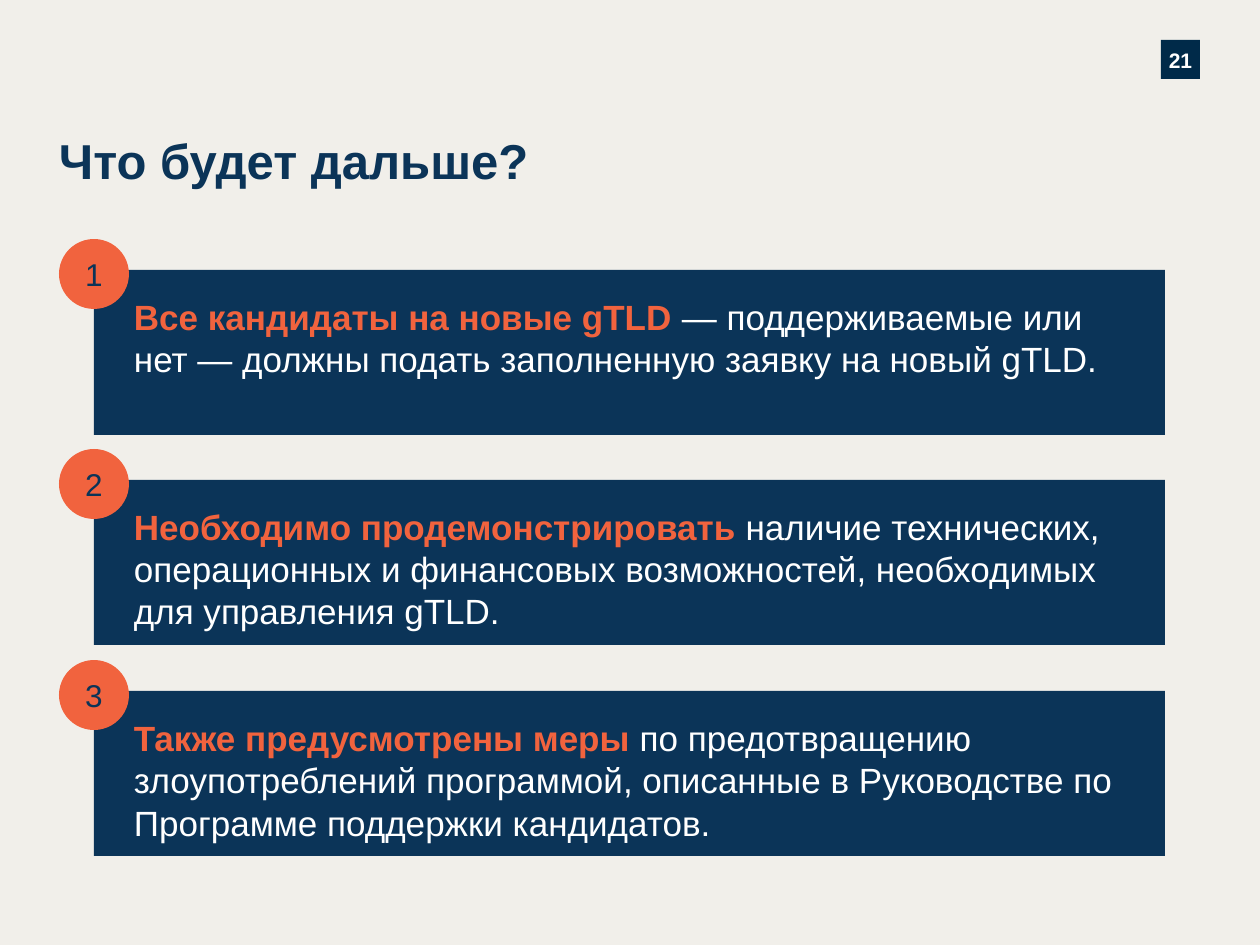
from dataclasses import dataclass

from pptx import Presentation
from pptx.dml.color import RGBColor
from pptx.enum.shapes import MSO_SHAPE
from pptx.enum.text import MSO_ANCHOR, PP_ALIGN
from pptx.util import Emu, Pt


@dataclass(frozen=True)
class Theme:
    font: str = "Arial"
    paper: str = "F1EFEA"
    navy: str = "0B3458"
    dark: str = "002A49"
    orange: str = "F1633E"
    white: str = "FFFFFF"
    title: int = 28
    body: int = 20
    leading: int = 24
    number: int = 18
    page: int = 12


T = Theme()
PX = 914400 / 126


def add_box(kind, box, fill, margins, anchor, align):
    """Add a shape (no fill colour means no fill); return its text frame and paragraph."""
    sp = s.shapes.add_shape(kind, *(Emu(round(v * PX)) for v in box))
    sp.shadow.inherit = False
    sp.line.fill.background()
    sp.fill.solid()
    sp.fill.fore_color.rgb = RGBColor.from_string(fill)
    return set_frame(sp.text_frame, margins, anchor, align)


def set_frame(tf, margins, anchor, align):
    tf.word_wrap = True
    tf.vertical_anchor = anchor
    tf.margin_left, tf.margin_top, tf.margin_right, tf.margin_bottom = (
        Emu(round(v * PX)) for v in margins)
    p = tf.paragraphs[0]
    p.alignment = align

    def add_run(text, size, color, bold=False):
        r = p.add_run()
        r.text = text
        r.font.name, r.font.size, r.font.bold = T.font, Pt(size), bold
        r.font.color.rgb = RGBColor.from_string(color)

    return p, add_run


prs = Presentation()
prs.slide_width, prs.slide_height = Emu(round(1260 * PX)), Emu(round(945 * PX))
s = prs.slides.add_slide(prs.slide_layouts[6])
s.background.fill.solid()
s.background.fill.fore_color.rgb = RGBColor.from_string(T.paper)

# Page number
p, add_run = add_box(MSO_SHAPE.RECTANGLE, (1161, 40, 39, 39), T.dark,
                     (0, 0, 0, 0), MSO_ANCHOR.MIDDLE, PP_ALIGN.CENTER)
p.line_spacing = 1.08
add_run("21", T.page, T.white, True)

# Title
title = s.shapes.add_textbox(*(Emu(round(v * PX)) for v in (59, 123, 741, 73)))
p, add_run = set_frame(title.text_frame, (0, 0, 0, 0), MSO_ANCHOR.MIDDLE, PP_ALIGN.LEFT)
add_run("Что будет дальше?", T.title, T.navy, True)

# Numbered steps
steps = [
    ("Все кандидаты на новые gTLD ",
     "— поддерживаемые или нет — должны подать заполненную заявку на новый gTLD."),
    ("Необходимо продемонстрировать ",
     "наличие технических, операционных и финансовых возможностей, "
     "необходимых для управления gTLD."),
    ("Также предусмотрены меры ",
     "по предотвращению злоупотреблений программой, описанные в Руководстве "
     "по Программе поддержки кандидатов."),
]
for i, (lead, rest) in enumerate(steps):
    top = 270 + i * 421 // 2
    p, add_run = add_box(MSO_SHAPE.RECTANGLE, (94, top, 1071, 165), T.navy,
                         (40, 26, 44, 39), MSO_ANCHOR.TOP, PP_ALIGN.LEFT)
    p.line_spacing = Pt(T.leading)
    add_run(lead, T.body, T.orange, True)
    add_run(rest, T.body, T.white)

    p, add_run = add_box(MSO_SHAPE.OVAL, (59, top - 31, 70, 70), T.orange,
                         (13, 6, 13, 6), MSO_ANCHOR.MIDDLE, PP_ALIGN.CENTER)
    add_run(str(i + 1), T.number, T.navy)

prs.save("out.pptx")
